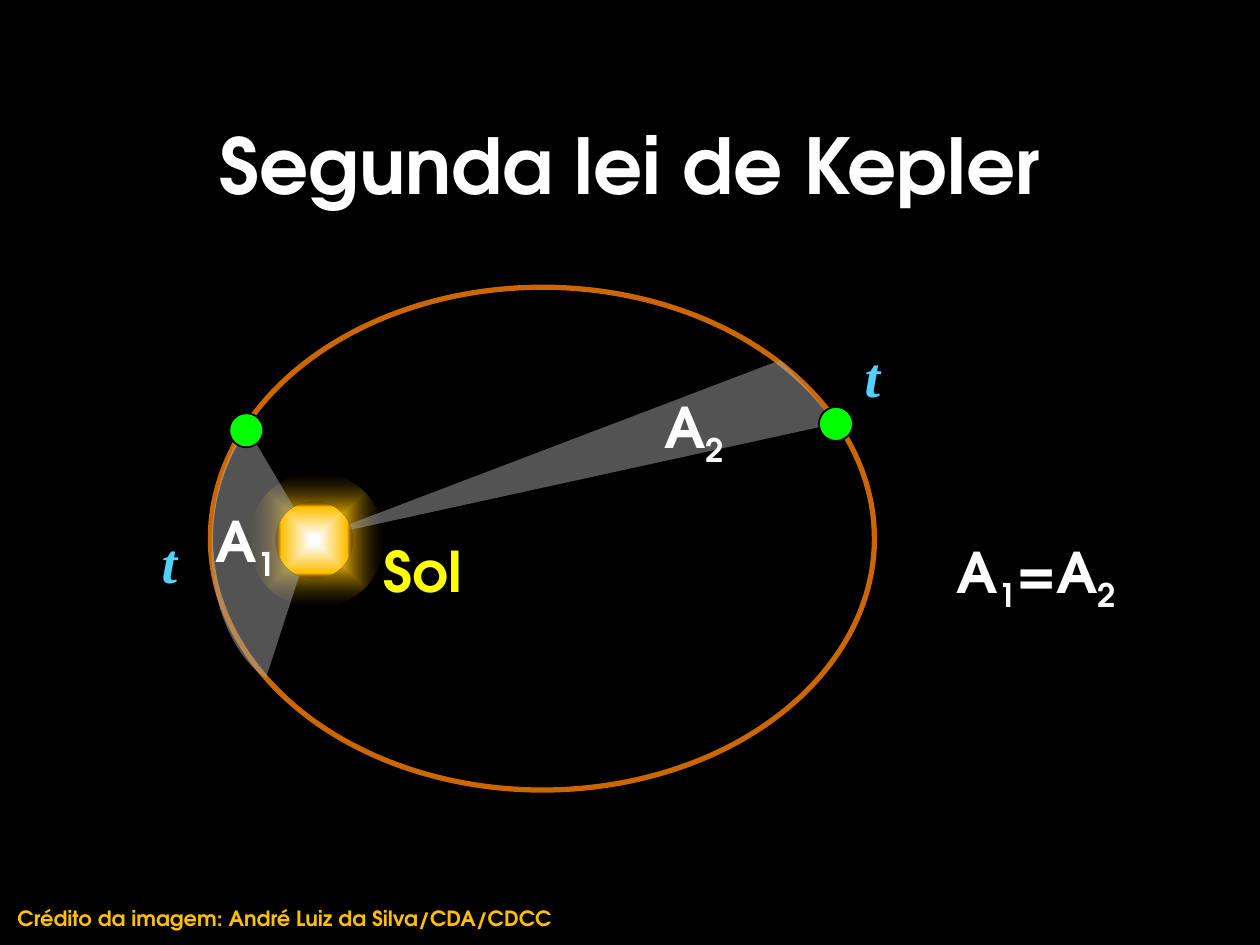
"""Build a slide on Kepler's second law: equal areas swept in equal times."""
from lxml.etree import SubElement
from pptx import Presentation
from pptx.dml.color import RGBColor
from pptx.enum.shapes import MSO_SHAPE as Preset
from pptx.enum.text import MSO_ANCHOR as Anchor, MSO_AUTO_SIZE as AutoSize, PP_ALIGN as Align
from pptx.oxml.ns import qn
from pptx.util import Inches, Pt

COLORS = {
    "space": "000000", "title": "FFFFFF", "orbit": "CC6600", "time": "53D2FF",
    "sun": "FFFF00", "area": "A6A6A6", "planet": "00FF00", "gold": "FFC000",
    "core": "FFFFFF", "rim": "4D0808",
}
SANS, SERIF = "TeX Gyre Adventor", "Times New Roman"


def add_shape(preset, box, fill=None, line=None, width=1):
    shape = slide.shapes.add_shape(preset, *map(Inches, box))
    shape.shadow.inherit = False
    for part, color in ((shape.fill, fill), (shape.line.fill, line)):
        if color:
            part.solid()
            part.fore_color.rgb = RGBColor.from_string(COLORS[color])
        else:
            part.background()
    if line:
        shape.line.width = Pt(width)
    return shape


def add_sun_layer(box, stops):
    shape = add_shape(Preset.OVAL, box)
    properties = shape._element.spPr
    gradient = SubElement(properties, qn("a:gradFill"), rotWithShape="1")
    properties.replace(properties.find(qn("a:noFill")), gradient)
    stop_list = SubElement(gradient, qn("a:gsLst"))
    for position, color, opacity in stops:
        stop = SubElement(stop_list, qn("a:gs"), pos=str(position * 1000))
        value = SubElement(stop, qn("a:srgbClr"), val=COLORS[color])
        SubElement(value, qn("a:alpha"), val=str(opacity * 1000))
    focus = SubElement(gradient, qn("a:path"), **{"path": "shape"})
    SubElement(focus, qn("a:fillToRect"), l="50000", t="50000", r="50000", b="50000")


presentation = Presentation()
presentation.slide_width, presentation.slide_height = Inches(10), Inches(7.5)
slide = presentation.slides.add_slide(presentation.slide_layouts[6])
slide.background.fill.solid()
slide.background.fill.fore_color.rgb = RGBColor.from_string(COLORS["space"])

add_sun_layer((1.97, 3.75, 1.08, 1.07),
              [(7, "core", 100), (32, "gold", 100), (100, "space", 23)])
add_shape(Preset.OVAL, (1.67, 2.28, 5.27, 3.99), line="orbit", width=3)

swept_areas = [
    ((1.68, 3.04, 1.59, 2.45), 3.7, (182.58, 45.4), True),
    ((-2.08, 1.44, 9.13, 5.66), 6, (199.9, 204.99), False),
]
for box, rotation, angles, flipped in swept_areas:
    sector = add_shape(Preset.ARC, box, fill="area")
    sector.rotation = rotation
    for index, angle in enumerate(angles):
        sector.adjustments[index] = angle
    if flipped:
        sector._element.spPr.get_or_add_xfrm().set("flipH", "1")
    tint = sector._element.spPr.find(qn("a:solidFill"))[0]
    SubElement(tint, qn("a:alpha"), val="50000")

add_sun_layer((2.19, 3.98, 0.61, 0.61),
              [(12, "core", 100), (85, "gold", 100), (100, "rim", 17)])
for left, top in ((1.82, 3.28), (6.5, 3.23)):
    add_shape(Preset.OVAL, (left, top, 0.27, 0.27), fill="planet", line="space")

title_style = {"name": SANS, "size": Pt(44), "bold": True}
label_style = {"name": SANS, "size": Pt(32), "bold": True}
time_style = {"name": SERIF, "size": Pt(32), "bold": True, "italic": True}
credit_style = {"name": SANS, "size": Pt(12), "bold": True}

# Every second run is a subscript.
labels = [
    ((0.75, 0.67, 8.5, 1.25), ["Segunda lei de Kepler"], title_style, "title", True, Align.CENTER),
    ((7.49, 4.22, 1.47, 0.64), ["A", "1", "=A", "2"], label_style, "title", False, Align.CENTER),
    ((6.76, 2.66, 0.33, 0.64), ["t"], time_style, "time", False, Align.CENTER),
    ((1.18, 4.14, 0.33, 0.64), ["t"], time_style, "time", False, Align.CENTER),
    ((2.8, 4.21, 1.11, 0.64), ["Sol"], label_style, "sun", True, Align.CENTER),
    ((0.04, 7.14, 5.28, 0.3), ["Crédito da imagem: André Luiz da Silva/CDA/CDCC"],
     credit_style, "gold", True, Align.LEFT),
    ((5.16, 3.07, 0.7, 0.64), ["A", "2"], label_style, "title", False, Align.CENTER),
    ((1.6, 3.97, 0.7, 0.64), ["A", "1"], label_style, "title", False, Align.CENTER),
]
for box, texts, style, color, wrap, alignment in labels:
    frame = slide.shapes.add_textbox(*map(Inches, box)).text_frame
    is_title = style is title_style
    frame.auto_size = AutoSize.NONE if is_title else AutoSize.SHAPE_TO_FIT_TEXT
    frame.vertical_anchor = Anchor.MIDDLE if is_title else Anchor.TOP
    frame.word_wrap = wrap
    paragraph = frame.paragraphs[0]
    paragraph.alignment = alignment
    for index, text in enumerate(texts):
        run = paragraph.add_run()
        run.text = text
        run.font.color.rgb = RGBColor.from_string(COLORS[color])
        for attribute, value in style.items():
            setattr(run.font, attribute, value)
        if index % 2:
            run.font._element.set("baseline", "-25000")

presentation.save("out.pptx")
